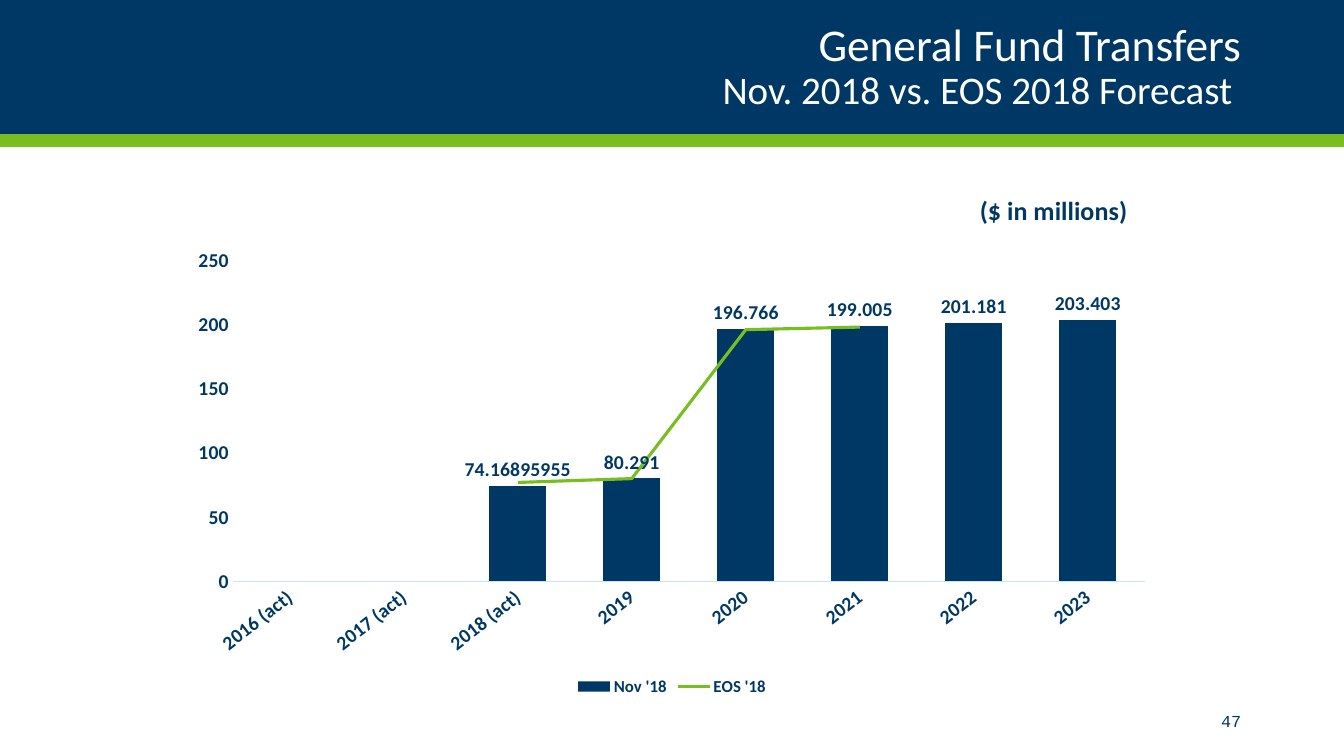
import copy
from dataclasses import dataclass

import pptx
import pptx.chart.data
import pptx.dml.color
import pptx.enum.chart
import pptx.enum.shapes
import pptx.enum.text
import pptx.oxml
import pptx.oxml.ns
import pptx.util
from pptx.util import Inches


@dataclass(frozen=True)
class Theme:
    navy: str = "003865"
    green: str = "78BE21"
    white: str = "FFFFFF"
    axis_line: str = "C2E4FF"
    body_font: str = "Calibri"
    number_font: str = "Courier New"
    title_size: float = 32.4
    subtitle_size: float = 27.9
    unit_size: float = 18.6
    label_size: float = 14
    legend_size: float = 12
    number_size: float = 12


THEME = Theme()
YEARS = ["2016 (act)", "2017 (act)", "2018 (act)",
         "2019", "2020", "2021", "2022", "2023"]
NOVEMBER = [None, None, 74.169, 80.291, 196.766, 199.005, 201.181, 203.403]
END_OF_SESSION = [None, None, 77, 80, 196, 198, None, None]


def rgb(color):
    return pptx.dml.color.RGBColor.from_string(color)


def set_font(font, size, color=THEME.navy, name=THEME.body_font, bold=False):
    font.size = pptx.util.Pt(size)
    font.name = name
    font.bold = bold
    font.color.rgb = rgb(color)


def chart_xml(tag, content="", attributes=""):
    return pptx.oxml.parse_xml(
        f'<c:{tag} {pptx.oxml.ns.nsdecls("c")} {attributes}>{content}</c:{tag}>')


def manual_layout(x, y, width=None, height=None):
    parts = '<c:xMode val="edge"/><c:yMode val="edge"/>'
    parts += f'<c:x val="{x}"/><c:y val="{y}"/>'
    if width:
        parts = '<c:layoutTarget val="inner"/>' + parts
        parts += f'<c:w val="{width}"/><c:h val="{height}"/>'
    return chart_xml("layout", f"<c:manualLayout>{parts}</c:manualLayout>")


def add_band(slide, left, top, width, height, color):
    band = slide.shapes.add_shape(
        pptx.enum.shapes.MSO_SHAPE.RECTANGLE, left, top, width, height)
    band.shadow.inherit = False
    band.fill.solid()
    band.fill.fore_color.rgb = rgb(color)
    band.line.fill.background()
    return band


def add_header(slide, left, top, width, height):
    stripe_height = Inches(0.13)
    navy_height = height - stripe_height
    heading = slide.shapes.title
    # Bands go behind the title
    for offset, band_height, color in ((0, navy_height, THEME.navy),
                                       (navy_height, stripe_height, THEME.green)):
        band = add_band(slide, left, top + offset, width, band_height, color)
        heading.element.addprevious(band.element)

    # Title and subtitle
    heading.left, heading.top = left + Inches(0.92), top + Inches(0.17)
    heading.width, heading.height = width - Inches(1.84), Inches(1)
    frame = heading.text_frame
    frame.word_wrap = True
    frame.vertical_anchor = pptx.enum.text.MSO_ANCHOR.MIDDLE
    paragraph = frame.paragraphs[0]
    paragraph.text = "General Fund Transfers\vNov. 2018 vs. EOS 2018 Forecast "
    paragraph.alignment = pptx.enum.text.PP_ALIGN.RIGHT
    paragraph.line_spacing = 0.9
    for run, size in zip(paragraph.runs, (THEME.title_size, THEME.subtitle_size)):
        set_font(run.font, size, THEME.white)


def move_last_series_to_line(chart):
    bars = chart.plots[0]._element
    forecast = bars.findall(pptx.oxml.ns.qn("c:ser"))[-1]
    for invert in forecast.findall(pptx.oxml.ns.qn("c:invertIfNegative")):
        forecast.remove(invert)
    line_plot = chart_xml(
        "lineChart", '<c:grouping val="standard"/><c:varyColors val="0"/>')
    line_plot.append(forecast)
    line_plot.append(chart_xml("marker", attributes='val="1"'))
    for axis_id in bars.findall(pptx.oxml.ns.qn("c:axId")):
        line_plot.append(copy.deepcopy(axis_id))
    bars.addnext(line_plot)


def format_axes(chart):
    years, amounts = chart.category_axis, chart.value_axis
    for axis in (years, amounts):
        axis.has_major_gridlines = False
        axis.major_tick_mark = pptx.enum.chart.XL_TICK_MARK.NONE
        axis.minor_tick_mark = pptx.enum.chart.XL_TICK_MARK.NONE
        set_font(axis.tick_labels.font, THEME.label_size, bold=True)
    years.format.line.color.rgb = rgb(THEME.axis_line)
    years.format.line.width = pptx.util.Pt(0.75)
    slant = years._element.find(".//" + pptx.oxml.ns.qn("a:bodyPr"))
    slant.set("rot", str(-38 * 60000))
    amounts.format.line.fill.background()
    amounts.minimum_scale, amounts.maximum_scale = 0, 250
    amounts.major_unit = 50


def add_transfers_chart(slide, left, top, width, height):
    data = pptx.chart.data.CategoryChartData()
    data.categories = YEARS
    data.add_series("Nov '18", NOVEMBER)
    data.add_series("EOS '18", END_OF_SESSION)
    chart = slide.shapes.add_chart(
        pptx.enum.chart.XL_CHART_TYPE.COLUMN_CLUSTERED,
        left, top, width, height, data).chart
    set_font(chart.font, 10)
    move_last_series_to_line(chart)
    format_axes(chart)

    # Columns with value labels
    columns, forecast_line = chart.plots
    columns.gap_width, columns.overlap = 100, -50
    columns.vary_by_categories = False
    november = columns.series[0]
    november.format.fill.solid()
    november.format.fill.fore_color.rgb = rgb(THEME.navy)
    labels = november.data_labels
    labels.show_value = True
    labels.position = pptx.enum.chart.XL_LABEL_POSITION.OUTSIDE_END
    set_font(labels.font, THEME.label_size, bold=True)

    # The 2018 actual is labelled in full
    actual = november.points[YEARS.index("2018 (act)")].data_label
    actual.position = pptx.enum.chart.XL_LABEL_POSITION.OUTSIDE_END
    full_amount = actual.text_frame.paragraphs[0]
    full_amount.text = "74.16895955"
    set_font(full_amount.runs[0].font, THEME.label_size, bold=True)

    # Forecast line
    forecast = forecast_line.series[0]
    forecast.smooth = False
    forecast.marker.style = pptx.enum.chart.XL_MARKER_STYLE.NONE
    forecast.format.line.color.rgb = rgb(THEME.green)
    forecast.format.line.width = pptx.util.Pt(2.25)

    # Unit caption
    chart.has_title = True
    caption = chart.chart_title
    caption.include_in_layout = False
    unit = caption.text_frame.paragraphs[0]
    unit.text = "($ in millions)"
    set_font(unit.runs[0].font, THEME.unit_size, bold=True)
    for automatic in caption._element.findall(pptx.oxml.ns.qn("c:layout")):
        caption._element.remove(automatic)
    caption._element.find(pptx.oxml.ns.qn("c:tx")).addnext(manual_layout(0.807, 0.018))

    # Plot area and legend
    plot_area = columns._element.getparent()
    for automatic in plot_area.findall(pptx.oxml.ns.qn("c:layout")):
        plot_area.remove(automatic)
    plot_area.insert(0, manual_layout(0.055, 0.157, 0.924, 0.615))
    chart.has_legend = True
    chart.legend.position = pptx.enum.chart.XL_LEGEND_POSITION.BOTTOM
    chart.legend.include_in_layout = False
    set_font(chart.legend.font, THEME.legend_size, bold=True)


def add_page_number(slide, left, top, width, height):
    frame = slide.shapes.add_textbox(left, top, width, height).text_frame
    frame.word_wrap = True
    frame.vertical_anchor = pptx.enum.text.MSO_ANCHOR.MIDDLE
    number = frame.paragraphs[0]
    number.text = "47"
    number.alignment = pptx.enum.text.PP_ALIGN.RIGHT
    set_font(number.runs[0].font, THEME.number_size, name=THEME.number_font)


def main():
    deck = pptx.Presentation()
    deck.slide_width, deck.slide_height = Inches(13.33), Inches(7.5)
    slide = deck.slides.add_slide(deck.slide_layouts.get_by_name("Title Only"))
    add_header(slide, 0, 0, deck.slide_width, Inches(1.46))
    add_page_number(slide, Inches(10.81), Inches(6.95), Inches(1.6), Inches(0.4))
    add_transfers_chart(slide, Inches(1.77), Inches(1.77), Inches(9.79), Inches(5.18))
    deck.save("out.pptx")


if __name__ == "__main__":
    main()
